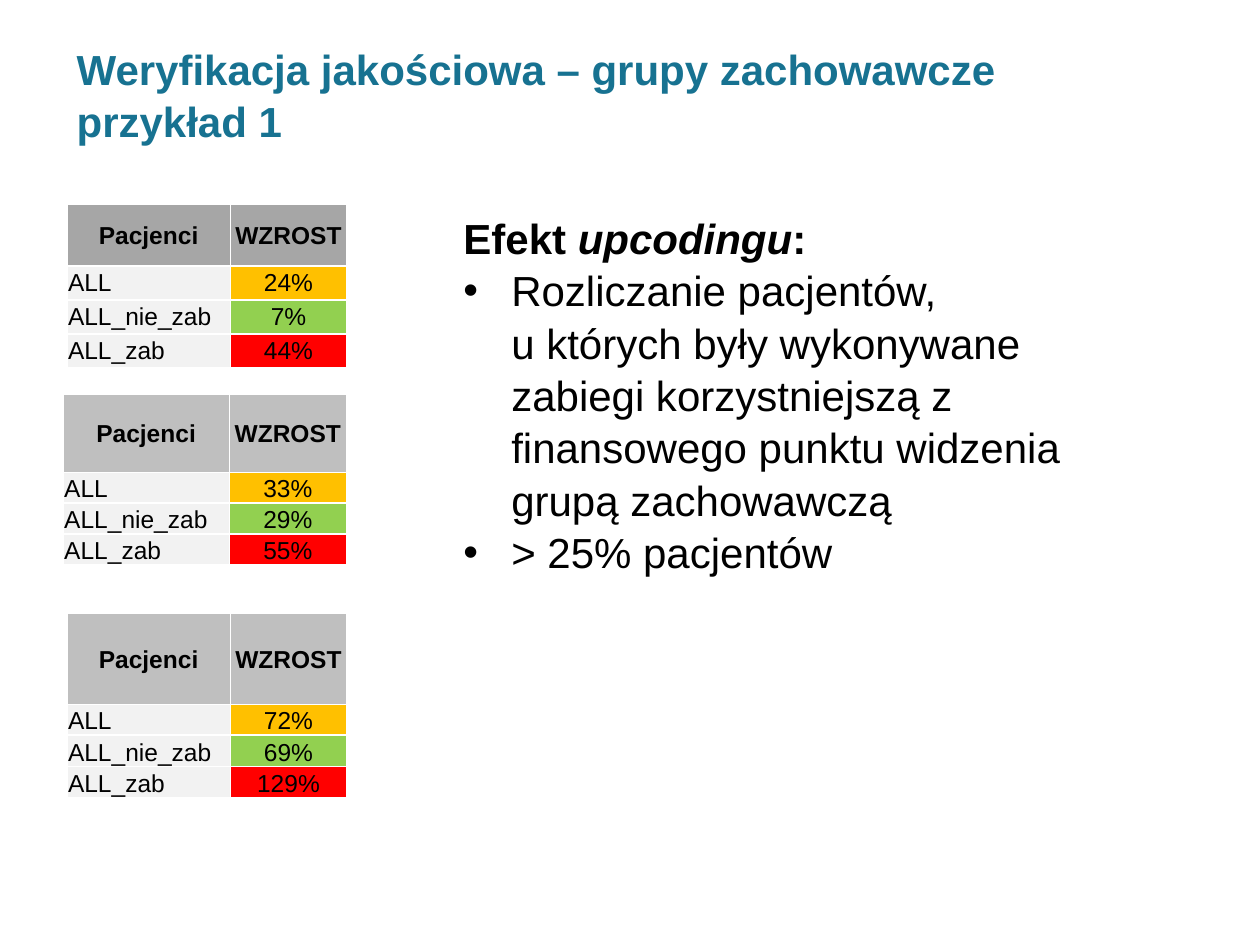
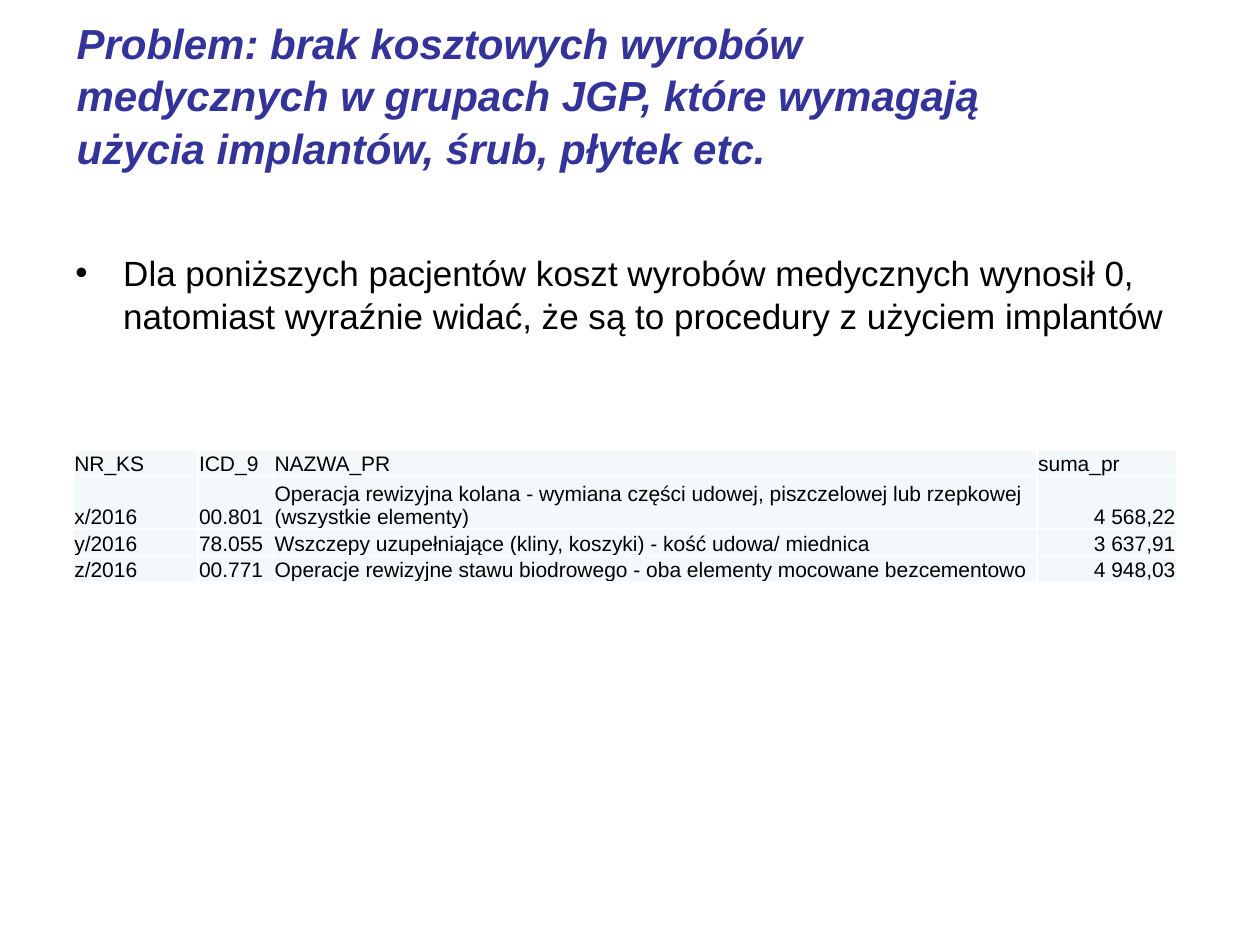
from lxml import etree
from pptx import Presentation
from pptx.dml.color import RGBColor
from pptx.enum import text as t
from pptx.oxml.ns import qn
from pptx.util import Inches, Pt

FONT = "Arial"
LINE_SPACING = 1.04
INDENT = 0.38
COLORS = {
    "teal": "177291", "indigo": "333399", "black": "000000", "white": "FFFFFF",
    "dark_gray": "A6A6A6", "gray": "BFBFBF", "light_gray": "F2F2F2",
    "amber": "FFC000", "green": "92D050", "red": "FF0000", "mist": "F3F9FA",
}
TITLE_BOX = (0.51, 0.44, 7.81, 0.61)
CENTER, LEFT, RIGHT = t.PP_ALIGN.CENTER, t.PP_ALIGN.LEFT, t.PP_ALIGN.RIGHT
MIDDLE, BOTTOM = t.MSO_ANCHOR.MIDDLE, t.MSO_ANCHOR.BOTTOM

UPCODING_TITLE = "Weryfikacja jakościowa – grupy zachowawcze przykład 1"
GROWTH_HEADER = ("Pacjenci", "WZROST")
PATIENT_GROUPS = ("ALL", "ALL_nie_zab", "ALL_zab")
GROWTH_FILLS = ("amber", "green", "red")
GROWTH_TABLES = [
    {"values": ("24%", "7%", "44%"), "at": (0.53, 1.62), "columns": (1.3, 0.92),
     "rows": (0.49, 0.27, 0.27, 0.27), "header": "dark_gray", "anchor": MIDDLE},
    {"values": ("33%", "29%", "55%"), "at": (0.5, 3.13), "columns": (1.32, 0.93),
     "rows": (0.62, 0.23, 0.23, 0.23), "header": "gray", "anchor": BOTTOM},
    {"values": ("72%", "69%", "129%"), "at": (0.53, 4.87), "columns": (1.3, 0.92),
     "rows": (0.72, 0.23, 0.25, 0.25), "header": "gray", "anchor": BOTTOM},
]
EFFECT_HEADING = [("Efekt ", False), ("upcodingu", True), (":", False)]
EFFECT_BULLETS = [
    "Rozliczanie pacjentów,\vu których były wykonywane zabiegi korzystniejszą "
    "z finansowego punktu widzenia grupą zachowawczą",
    "> 25% pacjentów",
]

IMPLANT_TITLE = ("Problem: brak kosztowych wyrobów medycznych w grupach JGP, "
                 "które wymagają użycia implantów, śrub, płytek etc.")
IMPLANT_BULLET = ("Dla poniższych pacjentów koszt wyrobów medycznych wynosił 0, "
                  "natomiast wyraźnie widać, że są to procedury z użyciem implantów")
PROCEDURES = [
    ("NR_KS", "ICD_9", "NAZWA_PR", "suma_pr"),
    ("x/2016", "00.801", "Operacja rewizyjna kolana - wymiana części udowej, "
     "piszczelowej lub rzepkowej (wszystkie elementy)", "4 568,22"),
    ("y/2016", "78.055", "Wszczepy uzupełniające (kliny, koszyki) - kość udowa/ miednica",
     "3 637,91"),
    ("z/2016", "00.771", "Operacje rewizyjne stawu biodrowego - oba elementy "
     "mocowane bezcementowo", "4 948,03"),
]


def color(name):
    return RGBColor.from_string(COLORS[name])


def style(paragraph, size, color_name="black", bold=False, italic=None):
    font = paragraph.font
    font.name, font.size, font.bold, font.italic = FONT, Pt(size), bold, italic
    font.color.rgb = color(color_name)


def add_text_box(slide, box):
    frame = slide.shapes.add_textbox(*map(Inches, box)).text_frame
    frame.word_wrap = True
    return frame


def add_title(slide, title, color_name, italic=False):
    frame = add_text_box(slide, TITLE_BOX)
    frame.vertical_anchor = MIDDLE
    paragraph = frame.paragraphs[0]
    paragraph.text = title
    paragraph.line_spacing = LINE_SPACING
    style(paragraph, 24, color_name, bold=True, italic=italic)


def fill_bullet(paragraph, words, size):
    paragraph.text = words
    paragraph.line_spacing = LINE_SPACING
    properties = paragraph._p.get_or_add_pPr()
    properties.set("marL", str(Inches(INDENT)))
    properties.set("indent", str(-Inches(INDENT)))
    etree.SubElement(properties, qn("a:buFont")).set("typeface", FONT)
    etree.SubElement(properties, qn("a:buChar")).set("char", "•")
    style(paragraph, size)


def add_borders(cell):
    """Draw thin white lines on all four sides of a cell."""
    properties = cell._tc.get_or_add_tcPr()
    for position, side in enumerate(("lnL", "lnR", "lnT", "lnB")):
        line = etree.Element(qn(f"a:{side}"), w=str(Pt(1)))
        solid = etree.SubElement(line, qn("a:solidFill"))
        etree.SubElement(solid, qn("a:srgbClr")).set("val", COLORS["white"])
        properties.insert(position, line)


def add_grid(slide, rows, at, widths, heights, size, cell_look):
    """Add a table; cell_look(row, column) gives fill, alignment, anchor, bold."""
    box = (*at, sum(widths), sum(heights))
    table = slide.shapes.add_table(len(rows), len(widths), *map(Inches, box)).table
    for column, width in zip(table.columns, widths):
        column.width = Inches(width)
    for row, height in zip(table.rows, heights):
        row.height = Inches(height)
    for r, row in enumerate(rows):
        for c, words in enumerate(row):
            fill, alignment, anchor, bold = cell_look(r, c)
            cell = table.cell(r, c)
            cell.margin_left = cell.margin_right = cell.margin_top = Inches(0.01)
            cell.margin_bottom = 0
            cell.vertical_anchor = anchor
            cell.fill.solid()
            cell.fill.fore_color.rgb = color(fill)
            add_borders(cell)
            paragraph = cell.text_frame.paragraphs[0]
            paragraph.text = words
            paragraph.alignment = alignment
            style(paragraph, size, bold=bold)


def add_growth_table(slide, growth):
    def look(r, c):
        if r == 0:
            return growth["header"], CENTER, MIDDLE, True
        if c == 0:
            return "light_gray", LEFT, growth["anchor"], False
        return GROWTH_FILLS[r - 1], CENTER, growth["anchor"], False

    rows = [GROWTH_HEADER, *zip(PATIENT_GROUPS, growth["values"])]
    add_grid(slide, rows, growth["at"], growth["columns"], growth["rows"], 14, look)


def build_upcoding_slide(slide):
    add_title(slide, UPCODING_TITLE, "teal")
    for growth in GROWTH_TABLES:
        add_growth_table(slide, growth)
    frame = add_text_box(slide, (3.58, 1.62, 5.04, 2.93))
    heading = frame.paragraphs[0]
    heading.line_spacing = LINE_SPACING
    for words, italic in EFFECT_HEADING:
        run = heading.add_run()
        run.text = words
        run.font.italic = italic
    style(heading, 24, bold=True)
    for words in EFFECT_BULLETS:
        fill_bullet(frame.add_paragraph(), words, 24)


def build_implant_slide(slide):
    def look(r, c):
        return "mist", RIGHT if r and c == 3 else LEFT, BOTTOM, False

    add_title(slide, IMPLANT_TITLE, "indigo", italic=True)
    frame = add_text_box(slide, (0.5, 1.55, 9, 5.15))
    frame.margin_top = Inches(0.43)
    fill_bullet(frame.paragraphs[0], IMPLANT_BULLET, 20)
    add_grid(slide, PROCEDURES, (0.58, 3.57), (0.99, 0.6, 6.06, 1.11),
             (0.21, 0.42, 0.21, 0.21), 12, look)


def main():
    presentation = Presentation()
    presentation.slide_width, presentation.slide_height = Inches(10), Inches(7.5)
    for build in (build_upcoding_slide, build_implant_slide):
        build(presentation.slides.add_slide(presentation.slide_layouts[6]))
    presentation.save("out.pptx")


if __name__ == "__main__":
    main()
